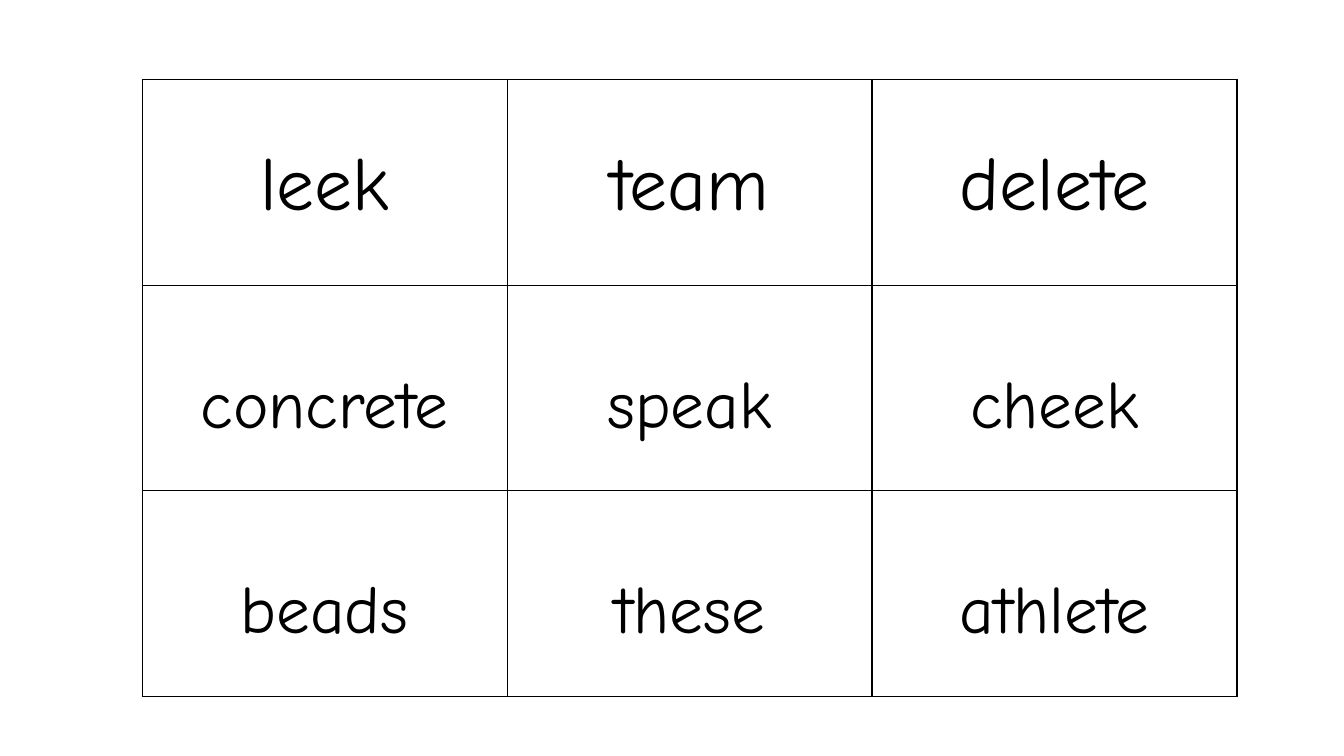
from lxml.etree import SubElement
from pptx import Presentation
from pptx.dml.color import RGBColor
from pptx.enum.text import PP_ALIGN
from pptx.oxml.ns import qn
from pptx.util import Inches, Pt

# Each row: words, font size in points, space above the word in inches
WORD_ROWS = [
    (("leek", "team", "delete"), 54, 0.62),
    (("concrete", "speak", "cheek"), 48, 0.82),
    (("beads", "these", "athlete"), 48, 0.82),
]
FONT = "Comic Neue"
BLACK = "000000"
LEFT, TOP = 1.41, 0.79
COLUMN_WIDTH, ROW_HEIGHT = 3.62, 2.04


def write_text(cell, text, size, color=BLACK, font=FONT, align=PP_ALIGN.CENTER):
    paragraph = cell.text_frame.paragraphs[0]
    paragraph.alignment = align
    run = paragraph.add_run()
    run.text = text
    run.font.name = font
    run.font.size = Pt(size)
    run.font.bold = False
    run.font.color.rgb = RGBColor.from_string(color)


def add_borders(cell, color=BLACK, width=1):
    properties = cell._tc.get_or_add_tcPr()
    for position, side in enumerate(("lnL", "lnR", "lnT", "lnB")):
        line = SubElement(properties, qn(f"a:{side}"), w=str(Pt(width)))
        fill = SubElement(line, qn("a:solidFill"))
        SubElement(fill, qn("a:srgbClr"), val=color)
        properties.insert(position, line)  # borders come before the cell fill


def add_word_table(slide):
    row_count, column_count = len(WORD_ROWS), len(WORD_ROWS[0][0])
    table = slide.shapes.add_table(
        row_count, column_count, Inches(LEFT), Inches(TOP),
        Inches(column_count * COLUMN_WIDTH), Inches(row_count * ROW_HEIGHT),
    ).table
    table.first_row = table.horz_banding = False
    for column in table.columns:
        column.width = Inches(COLUMN_WIDTH)
    for row, (words, size, space_above) in zip(table.rows, WORD_ROWS):
        row.height = Inches(ROW_HEIGHT)
        for cell, word in zip(row.cells, words):
            cell.margin_top = Inches(space_above)
            cell.fill.background()
            add_borders(cell)
            write_text(cell, word, size)


def main():
    presentation = Presentation()
    presentation.slide_width = Inches(13.33)
    presentation.slide_height = Inches(7.5)
    slide = presentation.slides.add_slide(presentation.slide_layouts[6])
    add_word_table(slide)
    presentation.save("out.pptx")


if __name__ == "__main__":
    main()
